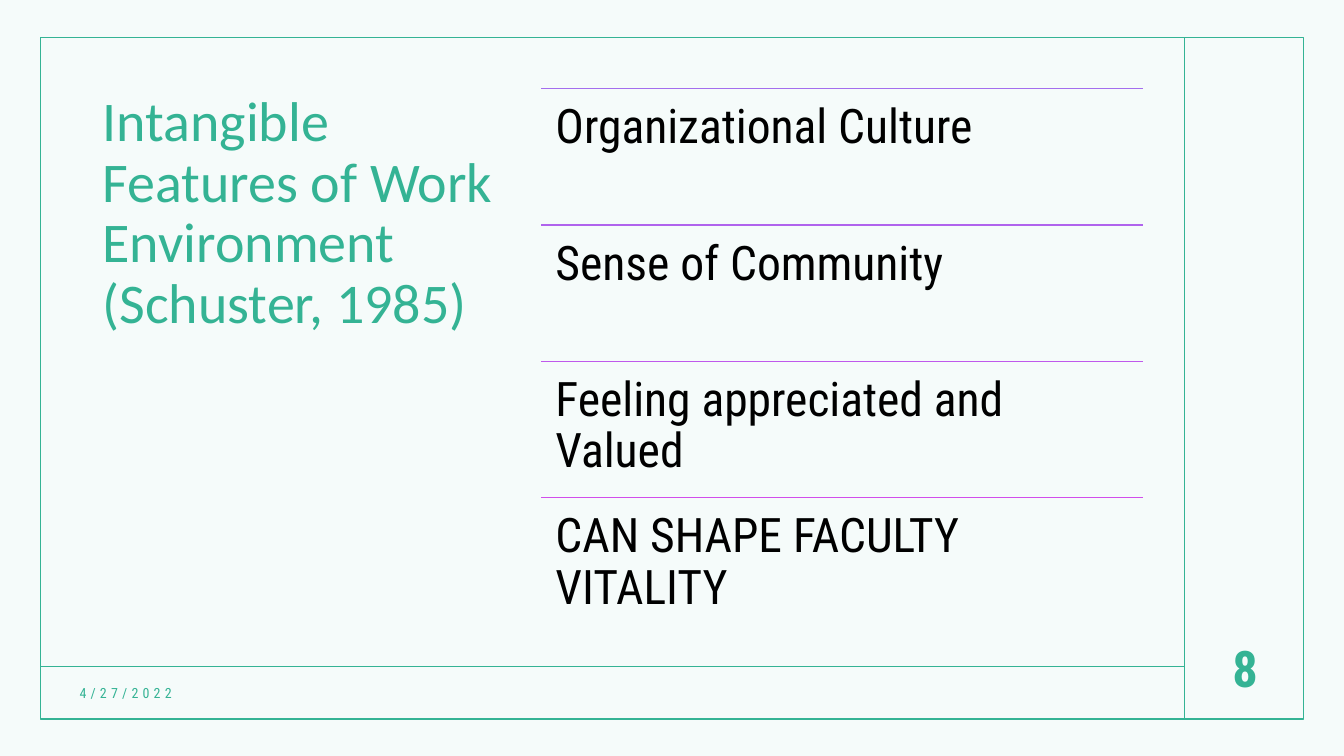
from lxml import etree
from pptx import Presentation
from pptx.dml.color import RGBColor
from pptx.enum.shapes import MSO_CONNECTOR, MSO_SHAPE
from pptx.enum.text import MSO_ANCHOR, PP_ALIGN
from pptx.oxml.ns import qn
from pptx.util import Inches, Pt

STRAIGHT = MSO_CONNECTOR.STRAIGHT
RECTANGLE = MSO_SHAPE.RECTANGLE
TOP, MIDDLE = MSO_ANCHOR.TOP, MSO_ANCHOR.MIDDLE
LEFT, CENTER = PP_ALIGN.LEFT, PP_ALIGN.CENTER

COLORS = {"background": "F5FBFA", "green": "34B394", "black": "000000"}
BODY_FONT, TITLE_FONT = "Roboto Condensed", "Calibri"

presentation = Presentation()
presentation.slide_width = Inches(13.33)
presentation.slide_height = Inches(7.5)
COLUMN = presentation.slide_width / 100
ROW = presentation.slide_height / 100

slide = presentation.slides.add_slide(presentation.slide_layouts[6])
slide.background.fill.solid()
slide.background.fill.fore_color.rgb = RGBColor.from_string(COLORS["background"])


def add_rule(x1, y1, x2, y2, color):
    rule = slide.shapes.add_connector(
        STRAIGHT, int(x1 * COLUMN), int(y1 * ROW), int(x2 * COLUMN), int(y2 * ROW))
    rule.line.color.rgb = RGBColor.from_string(color)
    rule.line.width = Pt(1)
    etree.SubElement(rule._element.spPr, qn("a:effectLst"))


def add_text(text, x, y, width, height, size, color, font=BODY_FONT,
             anchor=TOP, align=LEFT, inset=None):
    box = slide.shapes.add_textbox(
        int(x * COLUMN), int(y * ROW), int(width * COLUMN), int(height * ROW))
    frame = box.text_frame
    frame.word_wrap = True
    frame.vertical_anchor = anchor
    if inset is not None:
        frame.margin_left = frame.margin_right = inset
        frame.margin_top = frame.margin_bottom = inset
    paragraph = frame.paragraphs[0]
    paragraph.text = text
    paragraph.alignment = align
    paragraph.font.name = font
    paragraph.font.size = Pt(size)
    paragraph.font.color.rgb = RGBColor.from_string(color)
    return paragraph


FRAME_LEFT, FRAME_TOP, FRAME_WIDTH, FRAME_HEIGHT = 3, 4.93, 94, 90.2
SIDEBAR_LEFT, FOOTER_TOP = 88.15, 88.13
CONTENT_TOP = 11.7
LIST_LEFT, LIST_WIDTH, ITEM_HEIGHT = 40.28, 44.79, 18.04

border = slide.shapes.add_shape(
    RECTANGLE, int(FRAME_LEFT * COLUMN), int(FRAME_TOP * ROW),
    int(FRAME_WIDTH * COLUMN), int(FRAME_HEIGHT * ROW))
border.shadow.inherit = False
border.fill.background()
border.line.color.rgb = RGBColor.from_string(COLORS["green"])
border.line.width = Pt(1)

title = add_text("Intangible Features of Work Environment (Schuster, 1985)",
                 6.9, CONTENT_TOP, 33.38, 71.07, 40, COLORS["green"], TITLE_FONT)
title.line_spacing = 0.9

add_rule(SIDEBAR_LEFT, FRAME_TOP, SIDEBAR_LEFT, FRAME_TOP + FRAME_HEIGHT, COLORS["green"])
add_rule(FRAME_LEFT, FOOTER_TOP, SIDEBAR_LEFT, FOOTER_TOP, COLORS["green"])

date = add_text("4/27/2022", 5.18, 89.6, 25.88, 4.13, 10, COLORS["green"], anchor=MIDDLE)
date.space_after = Pt(6)
date.runs[0].font._element.set("spc", "300")

number = add_text("8", 88.75, 82.67, 7.8, 11.07, 36, COLORS["green"],
                  anchor=MIDDLE, align=CENTER)
number.space_after = Pt(6)
number.font.bold = True

features = [
    ("Organizational Culture", "A46EEE"),
    ("Sense of Community", "B063ED"),
    ("Feeling appreciated and Valued", "BF59EC"),
    ("CAN SHAPE FACULTY VITALITY", "D14EEB"),
]
for index, (feature, rule_color) in enumerate(features):
    item_top = CONTENT_TOP + index * ITEM_HEIGHT
    add_rule(LIST_LEFT, item_top, LIST_LEFT + LIST_WIDTH, item_top, rule_color)
    item = add_text(feature, LIST_LEFT, item_top, LIST_WIDTH, ITEM_HEIGHT,
                    34, COLORS["black"], inset=Inches(0.14))
    item.line_spacing = 0.9

presentation.save("out.pptx")
